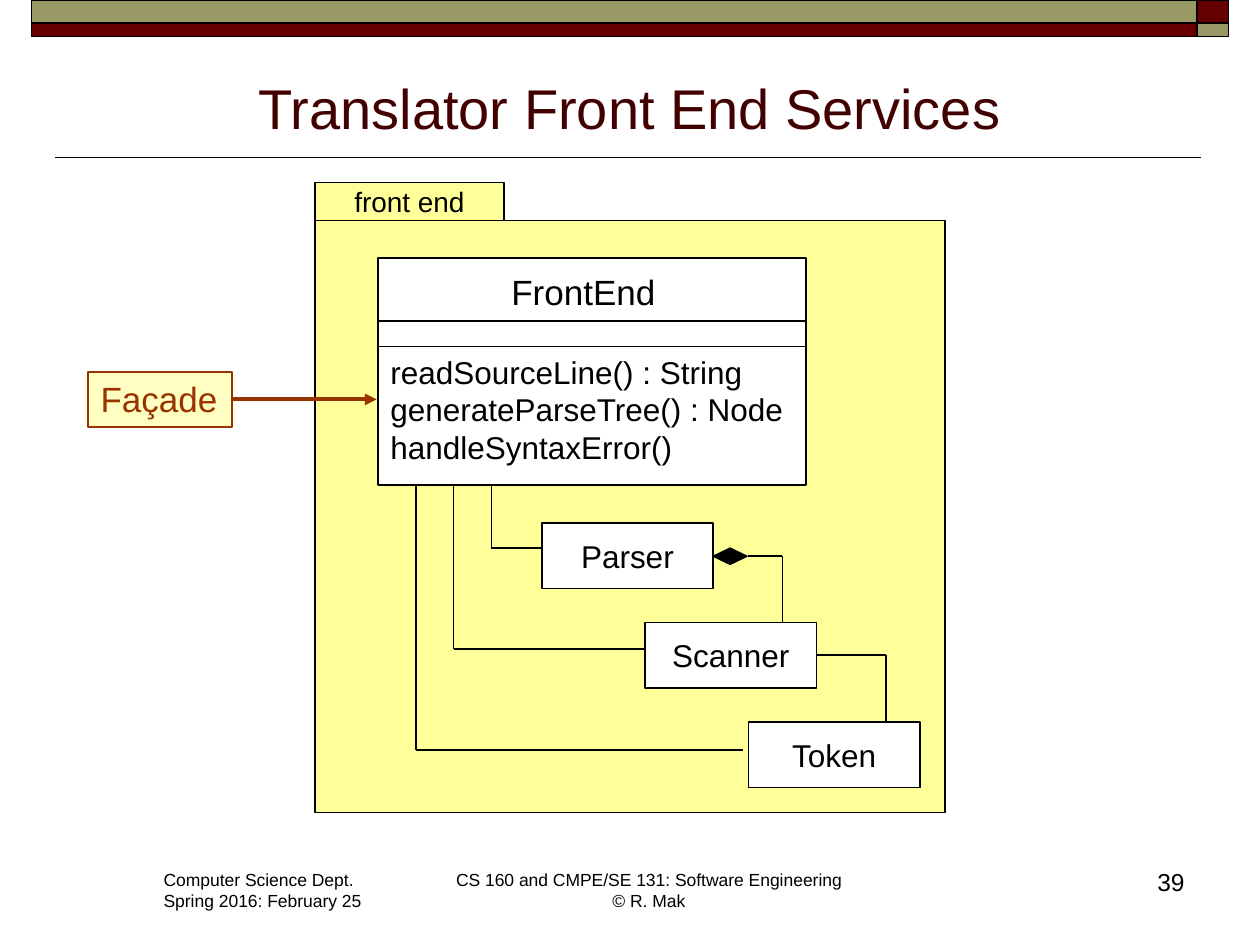
from lxml import etree
from pptx import Presentation
from pptx.dml.color import RGBColor
from pptx.enum import shapes, text
from pptx.oxml.ns import qn
from pptx.util import Inches, Pt

COLORS = {"black": "000000", "white": "FFFFFF", "maroon": "660000", "olive": "999966",
          "title": "420000", "package": "FFFF99", "note": "FFFFC2", "rust": "993300"}
LEFT, CENTER, RIGHT = text.PP_ALIGN.LEFT, text.PP_ALIGN.CENTER, text.PP_ALIGN.RIGHT
TOP, MIDDLE, BOTTOM = text.MSO_ANCHOR.TOP, text.MSO_ANCHOR.MIDDLE, text.MSO_ANCHOR.BOTTOM
RECT, DIAMOND = shapes.MSO_SHAPE.RECTANGLE, shapes.MSO_SHAPE.DIAMOND

prs = Presentation()
prs.slide_width, prs.slide_height = Inches(10), Inches(7.5)
s = prs.slides.add_slide(prs.slide_layouts[5])


def box(at, words="", size=18, color="black", fill=None, line="black", width=1,
        align=CENTER, anchor=MIDDLE, wrap=False, kind=RECT, sp=None):
    """Place a filled shape, a text box when there is no fill, or a given placeholder."""
    at = [Inches(v) for v in at]
    if sp is not None:
        sp.left, sp.top, sp.width, sp.height = at
    elif fill:
        sp = s.shapes.add_shape(kind, *at)
        sp.shadow.inherit = False
        sp.fill.solid()
        sp.fill.fore_color.rgb = RGBColor.from_string(COLORS[fill])
        sp.line.color.rgb = RGBColor.from_string(COLORS[line])
        sp.line.width = Pt(width)
    else:
        sp = s.shapes.add_textbox(*at)
    if words:
        tf = sp.text_frame
        tf.text = words
        frame = {"word_wrap": wrap, "vertical_anchor": anchor,
                 "auto_size": text.MSO_AUTO_SIZE.NONE}
        for name, value in frame.items():
            setattr(tf, name, value)
        for p in tf.paragraphs:
            p.alignment = align
            for r in p.runs:
                r.font.name, r.font.size = "Arial", Pt(size)
                r.font.color.rgb = RGBColor.from_string(COLORS[color])
    return sp


def connect(x1, y1, x2, y2, color="black", width=1):
    c = s.shapes.add_connector(shapes.MSO_CONNECTOR.STRAIGHT,
                               *[Inches(v) for v in (x1, y1, x2, y2)])
    c.line.color.rgb = RGBColor.from_string(COLORS[color])
    c.line.width = Pt(width)
    etree.SubElement(c._element.spPr, qn("a:effectLst"))
    return c


# Header bands and title
connect(0.44, 1.25, 9.53, 1.25)
for x, w, upper, lower in [(0.25, 9.25, "olive", "maroon"), (9.5, 0.25, "maroon", "olive")]:
    box((x, 0, w, 0.18), fill=upper)
    box((x, 0.18, w, 0.11), fill=lower)
box((0.5, 0.45, 9, 0.72), "Translator Front End Services", 32, "title",
    anchor=BOTTOM, wrap=True, sp=s.shapes.title)

# Footer
box((1.2, 6.85, 1.78, 0.44), "Computer Science Dept.\nSpring 2016: February 25", 10,
    align=LEFT, anchor=TOP)
box((3.5, 6.85, 3.3, 0.44), "CS 160 and CMPE/SE 131: Software Engineering\v© R. Mak", 10,
    anchor=TOP)
box((7.42, 6.83, 2.08, 0.5), "39", 14, align=RIGHT, anchor=TOP, wrap=True)

# Package
box((2.5, 1.75, 5, 4.7), fill="package", width=0.75)
box((2.5, 1.45, 1.5, 0.3), "front end", 16, fill="package", width=0.75)

# Service classes step down to the right
services = {}
for i, name in enumerate(["Parser", "Scanner", "Token"]):
    services[name] = box((4.3 + 0.82 * i, 4.15 + 0.79 * i, 1.36, 0.52), name, fill="white")

# Parser owns Scanner, Scanner uses Token
box((5.66, 4.35, 0.27, 0.13), fill="black", width=0.75, kind=DIAMOND)
connect(5.94, 4.41, 6.21, 4.41)
connect(6.21, 4.41, 6.21, 4.94)
connect(6.48, 5.2, 7.03, 5.2).begin_connect(services["Scanner"], 3)
connect(7.03, 5.2, 7.03, 5.73)

# FrontEnd class
box((3, 2.05, 3.4, 1.8), fill="white")
box((3.96, 2.1, 1.34, 0.43), "FrontEnd", 20, align=LEFT, anchor=TOP)
for y in (2.55, 2.75):
    connect(3, y, 6.4, y)
box((3, 2.75, 3.4, 1),
    "readSourceLine() : String\ngenerateParseTree() : Node\nhandleSyntaxError()",
    align=LEFT, anchor=TOP, wrap=True)

# FrontEnd reaches each service with an elbow
for x, y, end in [(3.9, 4.35, 4.3), (3.6, 5.15, 5.12), (3.3, 5.95, 5.9)]:
    connect(x, 3.85, x, y)
    connect(x, y, end, y)

# Façade note
note = box((0.7, 2.95, 1.14, 0.44), "Façade", 20, "rust", fill="note", line="rust",
           align=LEFT, anchor=TOP)
arrow = connect(1.84, 3.17, 2.99, 3.17, "rust", 2.25)
arrow.begin_connect(note, 3)
etree.SubElement(arrow.line._get_or_add_ln(), qn("a:tailEnd"), type="triangle")

prs.save("out.pptx")
